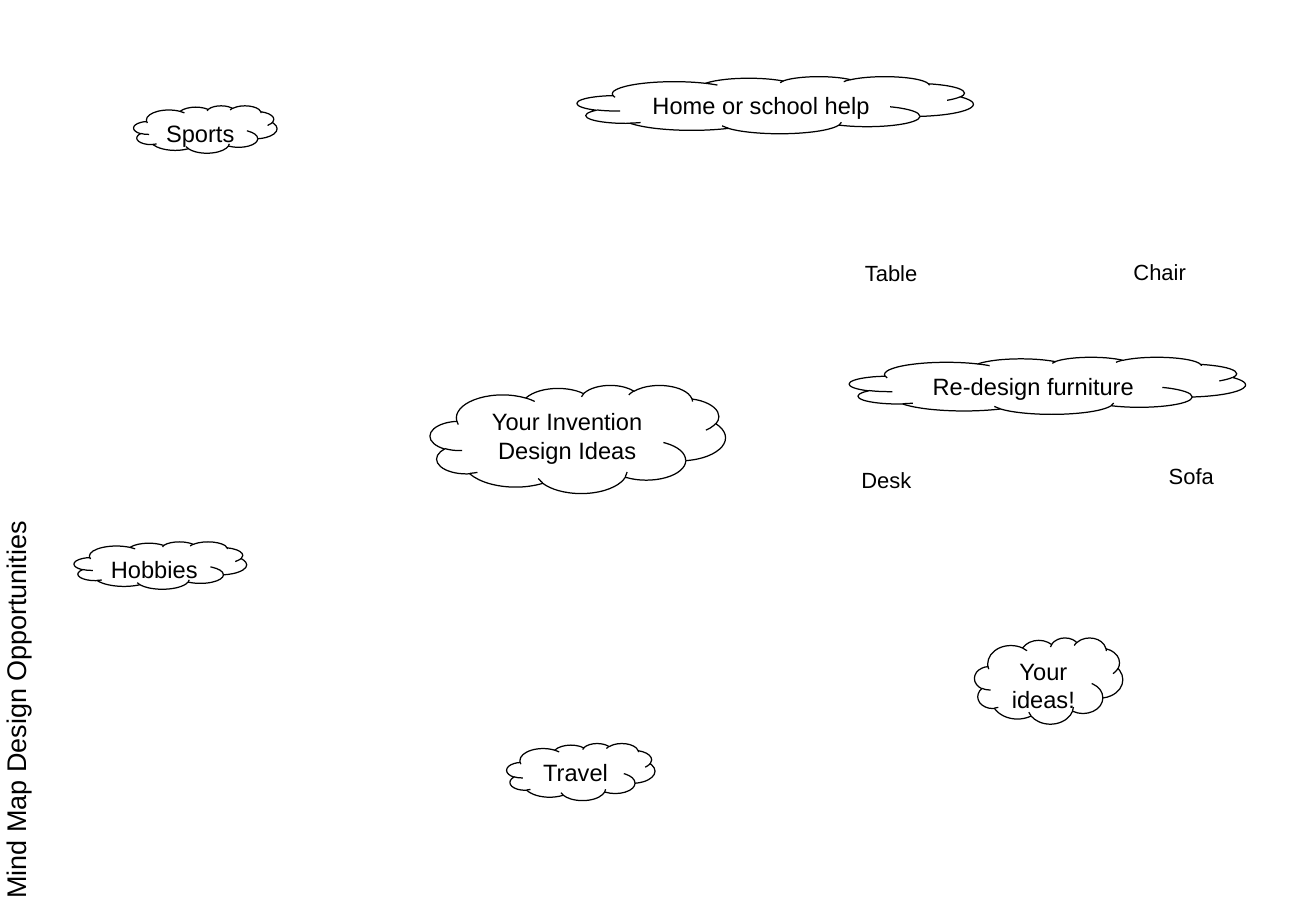
from pptx import Presentation
from pptx.dml.color import RGBColor
from pptx.enum import shapes, text
from pptx.util import Inches, Pt

BLACK = RGBColor(0x00, 0x00, 0x00)


def write(shape, wording, size, align):
    frame = shape.text_frame
    frame.word_wrap = True
    frame.vertical_anchor = text.MSO_ANCHOR.TOP
    paragraph = frame.paragraphs[0]
    paragraph.alignment = align
    run = paragraph.add_run()
    run.text = wording
    run.font.name = "Arial"
    run.font.size = Pt(size)
    run.font.color.rgb = BLACK


deck = Presentation()
deck.slide_width, deck.slide_height = Inches(10.83), Inches(7.5)
slide = deck.slides.add_slide(deck.slide_layouts[6])

# Themes of the mind map: wording, left, top, width, height
themes = [
    ("Sports", 1.1, 0.87, 1.18, 0.39),
    ("Your Invention Design Ideas", 3.54, 3.17, 2.43, 0.89),
    ("Hobbies", 0.61, 4.46, 1.42, 0.39),
    ("Travel", 4.17, 6.12, 1.22, 0.47),
    ("Home or school help", 4.75, 0.63, 3.26, 0.47),
    ("Your ideas!", 8.02, 5.25, 1.22, 0.71),
    ("Re-design furniture", 6.99, 2.94, 3.26, 0.47),
]
for wording, *place in themes:
    cloud = slide.shapes.add_shape(shapes.MSO_SHAPE.CLOUD, *map(Inches, place))
    cloud.shadow.inherit = False
    cloud.fill.background()
    cloud.line.color.rgb = BLACK
    cloud.line.width = Pt(0.75)
    write(cloud, wording, 14, text.PP_ALIGN.CENTER)

# Furniture around its cloud, then the title up the left edge:
# wording, font size, rotation, left, top, width, height
labels = [
    ("Desk", 13, 0, 6.99, 3.79, 1.34, 0.32),
    ("Table", 13, 0, 7.02, 2.09, 1.34, 0.32),
    ("Chair", 13, 0, 9.23, 2.08, 1.34, 0.32),
    ("Sofa", 13, 0, 9.52, 3.76, 1.34, 0.32),
    ("Mind Map Design Opportunities", 16, 270, -2.15, 5.03, 4.56, 0.37),
]
for wording, size, rotation, *place in labels:
    label = slide.shapes.add_textbox(*map(Inches, place))
    label.rotation = rotation
    label.text_frame.auto_size = text.MSO_AUTO_SIZE.SHAPE_TO_FIT_TEXT
    write(label, wording, size, text.PP_ALIGN.LEFT)

deck.save("out.pptx")
